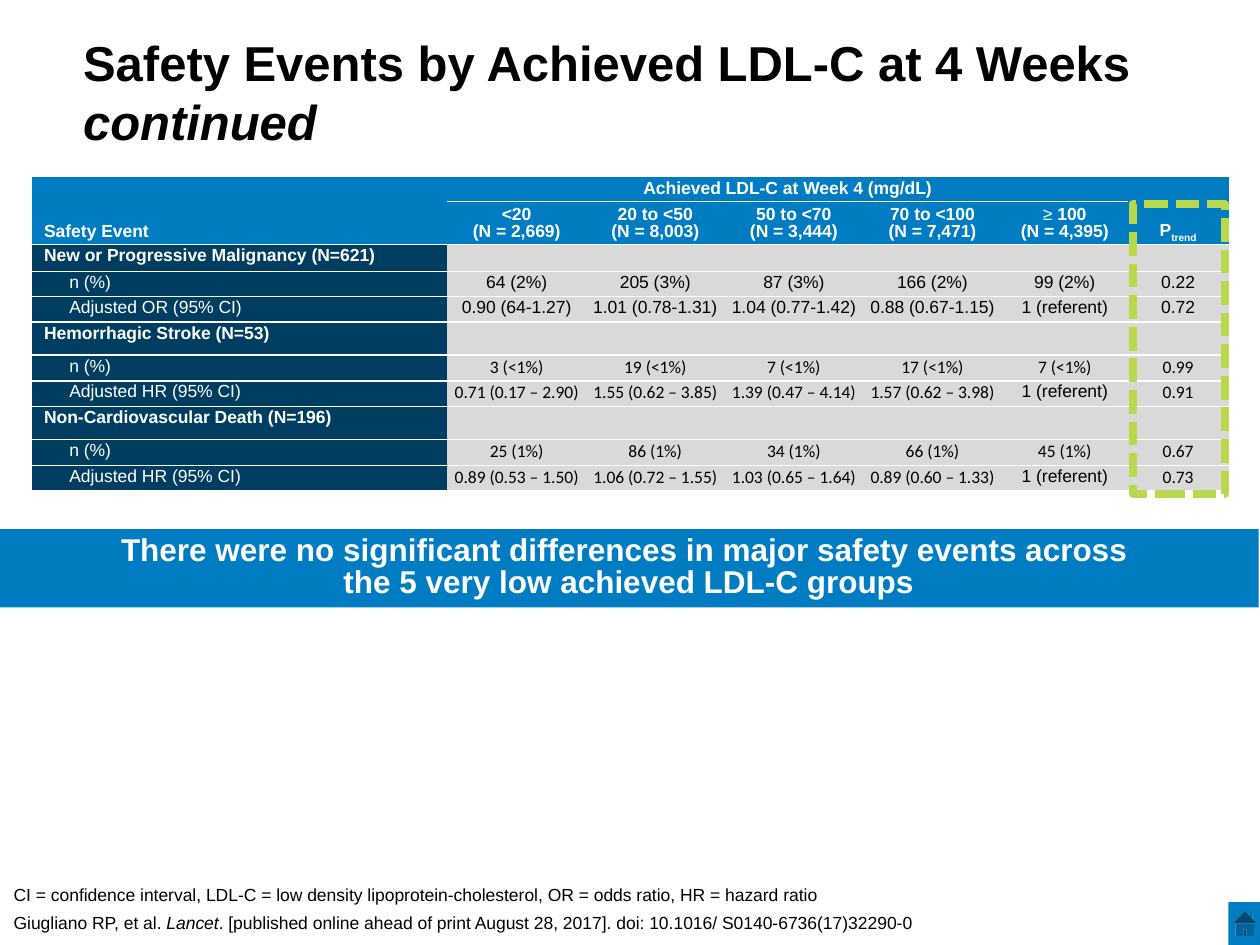
from typing import NamedTuple

from lxml.etree import SubElement
from pptx import Presentation
from pptx.dml.color import RGBColor
from pptx.enum.dml import MSO_LINE
from pptx.enum.shapes import MSO_SHAPE
from pptx.enum.text import MSO_ANCHOR, MSO_AUTO_SIZE, PP_ALIGN
from pptx.oxml.ns import qn
from pptx.util import Inches, Pt

BLUE, NAVY, GREY, LIME = "007CC2", "003E61", "D9D9D9", "B7D94B"
WHITE, BLACK = "FFFFFF", "000000"
COL_WIDTHS = [3.3, 1.1, 1.1, 1.1, 1.1, 1, 0.8]
ROW_HEIGHTS = [0.2, 0.34] + [0.2] * 9
REFERENT = "1 (referent)"


class Run(NamedTuple):
    text: str
    bold: bool | None = None
    italic: bool | None = None
    baseline: int = 0


class Event(NamedTuple):
    name: str
    ratio: str
    font: str
    blank_size: int
    counts: list[str]
    ratios: list[str]


class Box(NamedTuple):
    left: float
    top: float
    width: float
    height: float


GROUPS = [
    ([Run("<20")], "2,669"),
    ([Run("20 to <50")], "8,003"),
    ([Run("50 to <70")], "3,444"),
    ([Run("70 to <100")], "7,471"),
    ([Run("≥ ", bold=False), Run("100")], "4,395"),
]
EVENTS = [
    Event("New or Progressive Malignancy (N=621)", "OR", "Arial", 10,
          ["64 (2%)", "205 (3%)", "87 (3%)", "166 (2%)", "99 (2%)", "0.22"],
          ["0.90 (64-1.27)", "1.01 (0.78-1.31)", "1.04 (0.77-1.42)",
           "0.88 (0.67-1.15)", REFERENT, "0.72"]),
    Event("Hemorrhagic Stroke (N=53)", "HR", "Calibri", 12,
          ["3 (<1%)", "19 (<1%)", "7 (<1%)", "17 (<1%)", "7 (<1%)", "0.99"],
          ["0.71 (0.17 – 2.90)", "1.55 (0.62 – 3.85)", "1.39 (0.47 – 4.14)",
           "1.57 (0.62 – 3.98)", REFERENT, "0.91"]),
    Event("Non-Cardiovascular Death (N=196)", "HR", "Calibri", 12,
          ["25 (1%)", "86 (1%)", "34 (1%)", "66 (1%)", "45 (1%)", "0.67"],
          ["0.89 (0.53 – 1.50)", "1.06 (0.72 – 1.55)", "1.03 (0.65 – 1.64)",
           "0.89 (0.60 – 1.33)", REFERENT, "0.73"]),
]


def rgb(color: str) -> RGBColor:
    """Turn a hex string into a colour."""
    return RGBColor.from_string(color)


def write(p, runs: list[Run], size: float, color: str, name: str = "Arial",
          bold: bool = False) -> None:
    """Fill a paragraph with runs that share one font."""
    p.font.size, p.font.name, p.font.bold = Pt(size), name, bold
    p.font.color.rgb = rgb(color)
    for run in runs:
        r = p.add_run()
        r.text = run.text
        if run.bold is not None:
            r.font.bold = run.bold
        if run.italic is not None:
            r.font.italic = run.italic
        if run.baseline:
            r._r.get_or_add_rPr().set("baseline", str(run.baseline))


def format_cell(cell, fill: str, left: float = 0) -> None:
    """Give a cell its margins, white horizontal rules and fill."""
    cell.margin_left, cell.margin_right = Inches(left), 0
    cell.margin_top = cell.margin_bottom = Inches(0.03)
    tcPr = cell._tc.get_or_add_tcPr()
    for side in ("lnL", "lnR"):
        SubElement(SubElement(tcPr, qn(f"a:{side}"), w="0"), qn("a:noFill"))
    for side in ("lnT", "lnB"):
        ln = SubElement(tcPr, qn(f"a:{side}"), w=str(Pt(1)))
        SubElement(SubElement(ln, qn("a:solidFill")), qn("a:srgbClr"), val=WHITE)
    cell.fill.solid()
    cell.fill.fore_color.rgb = rgb(fill)


def fill_cell(cell, lines: list[list[Run]], fill: str, color: str, name: str = "Arial",
              bold: bool = False, label: bool = False, indent: float = 0) -> None:
    """Write the lines of one table cell."""
    format_cell(cell, fill, 0.1 if label else 0)
    for i, runs in enumerate(lines):
        tf = cell.text_frame
        p = tf.add_paragraph() if i else tf.paragraphs[0]
        p.line_spacing = 0.85
        p.alignment = PP_ALIGN.LEFT if label else PP_ALIGN.CENTER
        if indent:
            p._p.get_or_add_pPr().set("marL", str(Inches(indent)))
        write(p, runs, 10, color, name, bold)


def blank_cell(cell, font: str, size: int) -> None:
    """Format a cell without text."""
    format_cell(cell, GREY)
    p = cell.text_frame.paragraphs[0]
    p.line_spacing = 0.85
    end = SubElement(p._p, qn("a:endParaRPr"), sz=str(size * 100))
    SubElement(end, qn("a:latin"), typeface=font)


def add_header(table) -> None:
    """Draw the two header rows."""
    table.cell(0, 0).merge(table.cell(1, 0))
    table.cell(0, 1).merge(table.cell(0, 5))
    table.cell(0, 6).merge(table.cell(1, 6))
    headings = {
        (0, 0): [[Run("Safety Event")]],
        (0, 1): [[Run("Achieved LDL-C at Week 4 (mg/dL)")]],
        (0, 6): [[Run("P"), Run("trend", baseline=-25000)]],
    }
    for col, (level, n) in enumerate(GROUPS, 1):
        headings[1, col] = [level, [Run(f"(N = {n})")]]
    for (row, col), lines in headings.items():
        cell = table.cell(row, col)
        fill_cell(cell, lines, BLUE, WHITE, bold=True, label=col == 0)
        cell.vertical_anchor = MSO_ANCHOR.BOTTOM


def add_event(table, top: int, event: Event) -> None:
    """Draw the three rows of one safety event."""
    fill_cell(table.cell(top, 0), [[Run(event.name)]], NAVY, WHITE, bold=True, label=True)
    for col in range(1, len(COL_WIDTHS)):
        blank_cell(table.cell(top, col), event.font, event.blank_size)
    rows = [("n (%)", event.counts), (f"Adjusted {event.ratio} (95% CI)", event.ratios)]
    for row, (label, values) in enumerate(rows, top + 1):
        fill_cell(table.cell(row, 0), [[Run(label)]], NAVY, WHITE, label=True, indent=0.2)
        for col, value in enumerate(values, 1):
            font = "Arial" if value == REFERENT else event.font
            fill_cell(table.cell(row, col), [[Run(value)]], GREY, BLACK, font)


def add_box(s, kind: MSO_SHAPE, box: Box, fill: str | None = None):
    """Add a preset shape without line or shadow."""
    sp = s.shapes.add_shape(kind, *map(Inches, box))
    sp.shadow.inherit = False
    sp.line.fill.background()
    if fill:
        sp.fill.solid()
        sp.fill.fore_color.rgb = rgb(fill)
    else:
        sp.fill.background()
    return sp


def add_note(s, box: Box, runs: list[Run], wrap: bool) -> None:
    """Add a footnote."""
    tf = s.shapes.add_textbox(*map(Inches, box)).text_frame
    tf.word_wrap = wrap
    write(tf.paragraphs[0], runs, 10, BLACK)


def main() -> None:
    """Build the slide."""
    prs = Presentation()
    prs.slide_width, prs.slide_height = Inches(10), Inches(7.5)
    s = prs.slides.add_slide(prs.slide_layouts[5])

    title = s.shapes.title
    title.left, title.top, title.width, title.height = map(Inches, Box(0.56, 0.04, 8.88, 1.2))
    tf = title.text_frame
    tf.vertical_anchor, tf.auto_size = MSO_ANCHOR.BOTTOM, MSO_AUTO_SIZE.NONE
    tf.paragraphs[0].alignment = PP_ALIGN.LEFT
    write(tf.paragraphs[0], [Run("Safety Events by Achieved LDL-C at 4 Weeks "),
                             Run("continued", italic=True)], 28, BLACK, bold=True)

    frame = s.shapes.add_table(len(ROW_HEIGHTS), len(COL_WIDTHS),
                               *map(Inches, Box(0.25, 1.4, 9.5, 2.36)))
    table = frame.table
    table.first_row = table.horz_banding = False
    for column, width in zip(table.columns, COL_WIDTHS):
        column.width = Inches(width)
    for row, height in zip(table.rows, ROW_HEIGHTS):
        row.height = Inches(height)
    add_header(table)
    for i, event in enumerate(EVENTS):
        add_event(table, 2 + 3 * i, event)

    p = add_box(s, MSO_SHAPE.RECTANGLE, Box(-0.01, 4.2, 10, 0.62), BLUE).text_frame.paragraphs[0]
    p.alignment, p.line_spacing = PP_ALIGN.CENTER, 0.85
    write(p, [Run("There were no significant differences in major safety events across ")],
          18, WHITE, bold=True)
    p.add_line_break()
    p.add_run().text = "the 5 very low achieved LDL-C groups"

    add_note(s, Box(0.01, 7.19, 7.39, 0.44), [
        Run("Giugliano RP, et al. "), Run("Lancet", italic=True),
        Run(". [published online ahead of print August 28, 2017]. "
            "doi: 10.1016/ S0140-6736(17)32290-0")], False)
    add_note(s, Box(0.01, 6.97, 7.38, 0.27), [
        Run("CI = confidence interval, LDL-C = low density lipoprotein-cholesterol, "
            "OR = odds ratio, HR = hazard ratio")], True)
    add_box(s, MSO_SHAPE.ACTION_BUTTON_HOME, Box(9.75, 7.16, 0.26, 0.34), BLUE)
    line = add_box(s, MSO_SHAPE.RECTANGLE, Box(8.99, 1.62, 0.73, 2.3)).line
    line.color.rgb = rgb(LIME)
    line.width, line.dash_style = Pt(4.5), MSO_LINE.SQUARE_DOT
    prs.save("out.pptx")


if __name__ == "__main__":
    main()
